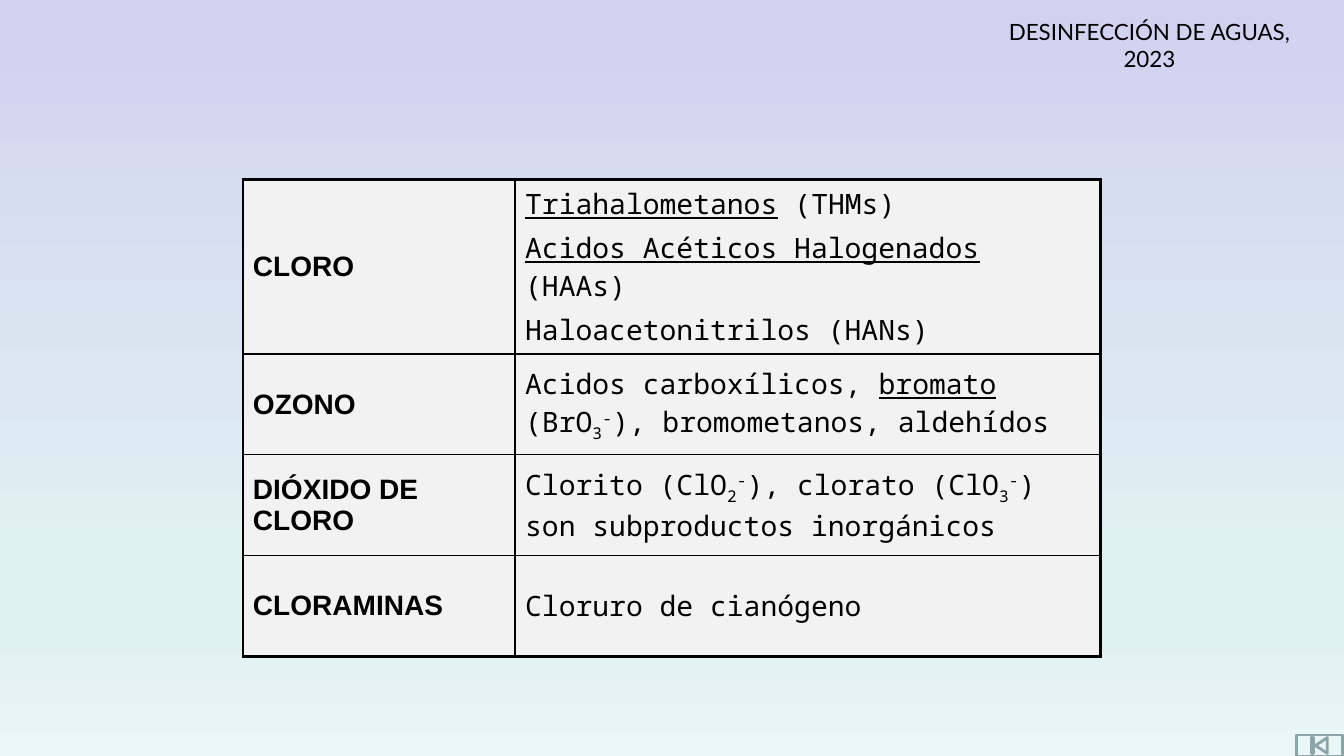
from lxml.etree import SubElement
from pptx import Presentation
from pptx.dml.color import RGBColor
from pptx.enum.shapes import MSO_SHAPE
from pptx.enum.text import MSO_ANCHOR, PP_ALIGN
from pptx.oxml.ns import qn
from pptx.util import Pt

COLORS = {"ink": "000000", "cell": "F2F2F2", "button": "8AA6A8"}
SKY = [(0, "D1D1F0"), (74, "E0F1F2"), (83, "E0F1F2"), (100, "EBF6F7")]
MONO = "Noto Sans Mono"
THIN, THICK = 1, 2.25
BASE = {"sub": -25000, "sup": 30000}

# Each agent has paragraphs made of (text, style) runs.
AGENTS = [
    ("CLORO", [
        [("Triahalometanos", "under"), (" (THMs)", "")],
        [("Acidos Acéticos Halogenados ", "under"), ("(HAAs)", "")],
        [("Haloacetonitrilos (HANs)", "")],
    ]),
    ("OZONO", [
        [("Acidos carboxílicos, ", ""), ("bromato", "under"), (" (BrO", ""),
         ("3", "sub"), ("-", "sup"), ("), bromometanos, aldehídos", "")],
    ]),
    ("DIÓXIDO DE CLORO", [
        [("Clorito (ClO", ""), ("2", "sub"), ("-", "sup"), ("), clorato (ClO", ""),
         ("3", "sub"), ("-", "sup"), (") son subproductos inorgánicos", "")],
    ]),
    ("CLORAMINAS", [[("Cloruro de cianógeno", "")]]),
]


def rgb(name):
    return RGBColor.from_string(COLORS[name])


def write(frame, paras, font, size, bold=False, align=PP_ALIGN.LEFT, before=0):
    frame.word_wrap = True
    for i, runs in enumerate(paras):
        para = frame.paragraphs[0] if i == 0 else frame.add_paragraph()
        para.alignment = align
        para.space_before = Pt(before)
        for text, style in runs:
            run = para.add_run()
            run.text = text
            run.font.name, run.font.size = font, Pt(size)
            run.font.bold = bold
            run.font.underline = style == "under"
            run.font.color.rgb = rgb("ink")
            if style in BASE:
                run.font._element.set("baseline", str(BASE[style]))


def paint(slide):
    """Fill the background with the vertical gradient."""
    fill = slide.background.fill
    fill.gradient()
    fill.gradient_angle = 270
    stops = slide._element.find(".//" + qn("a:gsLst"))
    for stop in list(stops):
        stops.remove(stop)
    for place, color in SKY:
        stop = SubElement(stops, qn("a:gs"), pos=str(place * 1000))
        SubElement(stop, qn("a:srgbClr"), val=color)


def header(slide, left, top, width, height):
    box = slide.shapes.add_textbox(Pt(left), Pt(top), Pt(width), Pt(height))
    write(box.text_frame, [[("DESINFECCIÓN DE AGUAS, 2023", "")]],
          "Lato", 16, align=PP_ALIGN.CENTER)


def button(slide, left, top, width, height):
    shape = slide.shapes.add_shape(MSO_SHAPE.ACTION_BUTTON_BEGINNING,
                                   Pt(left), Pt(top), Pt(width), Pt(height))
    shape.shadow.inherit = False
    shape.fill.background()
    shape.line.color.rgb = rgb("button")
    shape.line.width = Pt(2)


def border(cell, **widths):
    props = cell._tc.get_or_add_tcPr()
    for side, width in widths.items():
        line = SubElement(props, qn("a:ln" + side), w=str(Pt(width)))
        fill = SubElement(line, qn("a:solidFill"))
        SubElement(fill, qn("a:srgbClr"), val=COLORS["ink"])


def grid(slide, left, top, width, height):
    """Place the table of disinfectants and their by-products."""
    count = len(AGENTS)
    table = slide.shapes.add_table(count, 2, Pt(left), Pt(top),
                                   Pt(width), Pt(height)).table
    table.first_row = table.horz_banding = False
    first, low = 194.4, 72
    table.columns[0].width = Pt(first)
    table.columns[1].width = Pt(width - first)
    for r, (agent, products) in enumerate(AGENTS):
        table.rows[r].height = Pt(low if r else height - low * (count - 1))
        pair = [([[(agent, "")]], "Arial", True), (products, MONO, False)]
        for c, (paras, font, bold) in enumerate(pair):
            cell = table.cell(r, c)
            border(cell, L=THIN if c else THICK, R=THICK if c else THIN,
                   T=THIN if r else THICK,
                   B=THICK if r == count - 1 else THIN)
            cell.fill.solid()
            cell.fill.fore_color.rgb = rgb("cell")
            cell.vertical_anchor = MSO_ANCHOR.MIDDLE
            write(cell.text_frame, paras, font, 20, bold=bold, before=4)


def main():
    deck = Presentation()
    deck.slide_width, deck.slide_height = Pt(960), Pt(540)
    slide = deck.slides.add_slide(deck.slide_layouts[6])
    paint(slide)
    button(slide, 926, 525, 33, 15)
    header(slide, 707, 9.4, 228.2, 46)
    grid(slide, 173.5, 128.2, 612.4, 340.6)
    deck.save("out.pptx")


if __name__ == "__main__":
    main()
